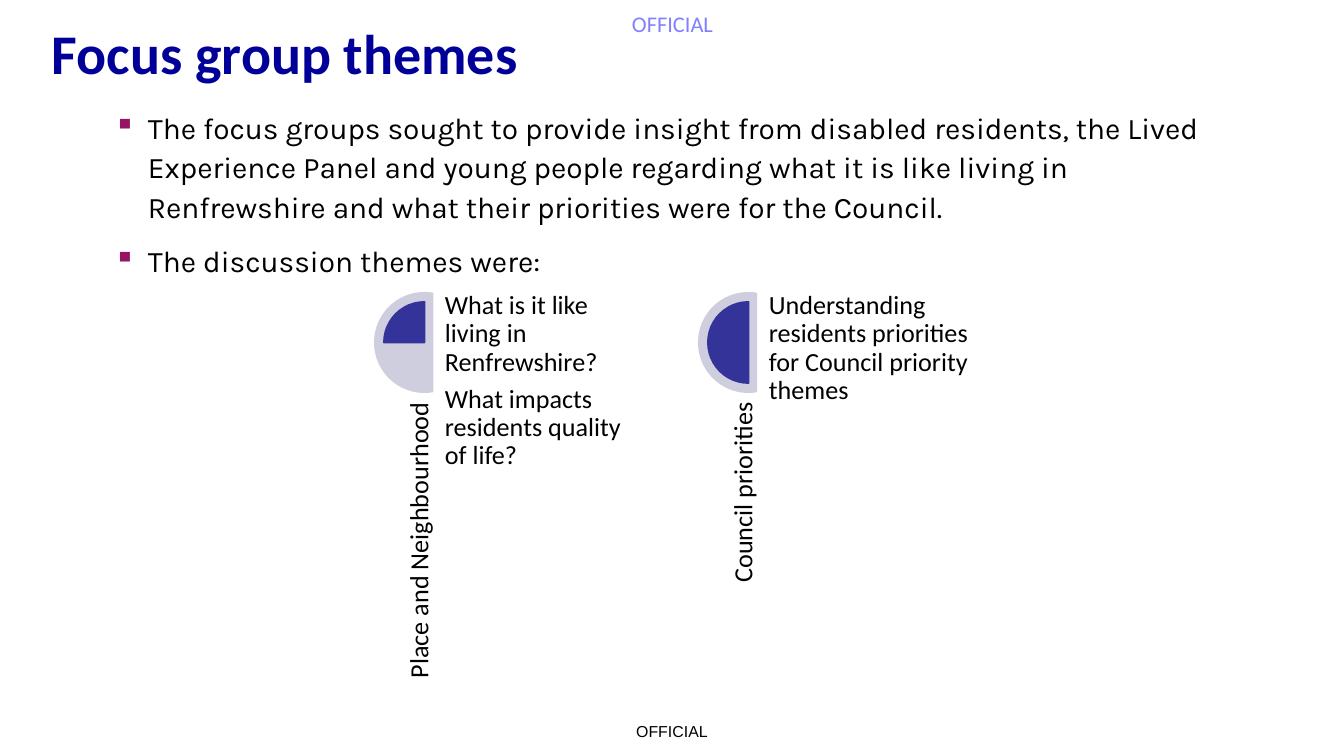
from lxml.etree import SubElement
from pptx import Presentation
from pptx.dml.color import RGBColor
from pptx.enum.shapes import MSO_SHAPE
from pptx.enum.text import MSO_ANCHOR, PP_ALIGN
from pptx.oxml.ns import qn
from pptx.util import Pt

# Content
TITLE = "Focus group themes"
MARKING = "OFFICIAL"
POINTS = [
    "The focus groups sought to provide insight from disabled residents, the Lived "
    "Experience Panel and young people regarding what it is like living in "
    "Renfrewshire and what their priorities were for the Council.",
    "The discussion themes were:",
]
# Each theme: label, pie start angle in degrees, questions
THEMES = [
    ("Place and Neighbourhood", 180,
     ["What is it like living in Renfrewshire?",
      "What impacts residents quality of life?"]),
    ("Council priorities", 90,
     ["Understanding residents priorities for Council priority themes"]),
]
COLOURS = {"title": "000099", "text": "000000", "marking": "0000FF",
           "bullet": "971465", "ring": "CECEDE", "pie": "333399"}

# Layout in px
EMU_PER_PX = 914400 / 134.4
SLIDE_W, SLIDE_H = 1344, 756
THEME_LEFT, THEME_TOP, THEME_STEP = 374, 292, 324
RING, PIE = 101, 81
LABEL_LENGTH, LABEL_DEPTH = 293, 60
BULLET_INDENT = 34


def px(value):
    return round(value * EMU_PER_PX)


def colour(name):
    return RGBColor.from_string(COLOURS[name])


def add_text(box, lines, size, fill="text", font="Calibri", bold=False,
             align=PP_ALIGN.LEFT, anchor=MSO_ANCHOR.TOP, wrap=True,
             spacing=None, before=0, after=0, bulleted=False):
    shape = slide.shapes.add_textbox(*map(px, box))
    frame = shape.text_frame
    frame.word_wrap = wrap
    frame.vertical_anchor = anchor
    frame.margin_left = frame.margin_right = 0
    frame.margin_top = frame.margin_bottom = 0
    for i, line in enumerate(lines):
        paragraph = frame.paragraphs[0] if i == 0 else frame.add_paragraph()
        if bulleted:
            add_bullet(paragraph)
        paragraph.alignment = align
        paragraph.line_spacing = spacing
        paragraph.space_before = Pt(before if i else 0)
        paragraph.space_after = Pt(after)
        run = paragraph.add_run()
        run.text = line
        run.font.size = Pt(size)
        run.font.name = font
        run.font.bold = bold
        run.font.color.rgb = colour(fill)
    return shape


def add_bullet(paragraph):
    props = paragraph._p.get_or_add_pPr()
    props.set("marL", str(px(BULLET_INDENT)))
    props.set("indent", str(-px(BULLET_INDENT)))
    bullet_colour = SubElement(props, qn("a:buClr"))
    SubElement(bullet_colour, qn("a:srgbClr"), val=COLOURS["bullet"])
    SubElement(props, qn("a:buChar"), char="▪")


def add_arc(kind, left, top, size, fill, start, end):
    arc = slide.shapes.add_shape(kind, px(left), px(top), px(size), px(size))
    arc.shadow.inherit = False
    # Angles are stored in 60000ths of a degree, adjustments in 100000ths
    arc.adjustments[0], arc.adjustments[1] = start * 0.6, end * 0.6
    arc.fill.solid()
    arc.fill.fore_color.rgb = colour(fill)
    return arc


presentation = Presentation()
presentation.slide_width, presentation.slide_height = px(SLIDE_W), px(SLIDE_H)
slide = presentation.slides.add_slide(presentation.slide_layouts[6])

# Security markings, the upper one half transparent
add_text((0, 715, SLIDE_W, 32), [MARKING], 8.5, font="Arial",
         align=PP_ALIGN.CENTER, anchor=MSO_ANCHOR.MIDDLE)
header = add_text((632, 10, 86, 27), [MARKING], 12, fill="marking", wrap=False)
for rgb in header._element.iter(qn("a:srgbClr")):
    SubElement(rgb, qn("a:alpha"), val="50000")

# Title
add_text((52, 30, 866, 101), [TITLE], 30, fill="title", bold=True, spacing=Pt(30))

# Themes: ring with pie, upright label below, questions to the right
for i, (label, pie_start, questions) in enumerate(THEMES):
    left = THEME_LEFT + i * THEME_STEP
    inset = (RING - PIE) / 2
    add_arc(MSO_SHAPE.CHORD, left, THEME_TOP, RING, "ring", 80, 280).line.fill.background()
    pie = add_arc(MSO_SHAPE.PIE, left + inset, THEME_TOP + inset, PIE, "pie", pie_start, 270)
    pie.line.color.rgb = colour("pie")
    pie.line.width = Pt(1)

    centre_x, centre_y = left + LABEL_DEPTH / 2, THEME_TOP + 257
    upright = add_text((centre_x - LABEL_LENGTH / 2, centre_y - LABEL_DEPTH / 2,
                        LABEL_LENGTH, LABEL_DEPTH), [label], 14,
                       align=PP_ALIGN.RIGHT, anchor=MSO_ANCHOR.BOTTOM, spacing=0.9)
    upright.rotation = 270
    add_text((left + 71, THEME_TOP, 202, 403), questions, 14, spacing=0.9, after=4.9)

# Introductory points
add_text((114, 106, 1117, 398), POINTS, 16, font="Karla", spacing=1.1,
         before=8, bulleted=True)

presentation.save("out.pptx")
